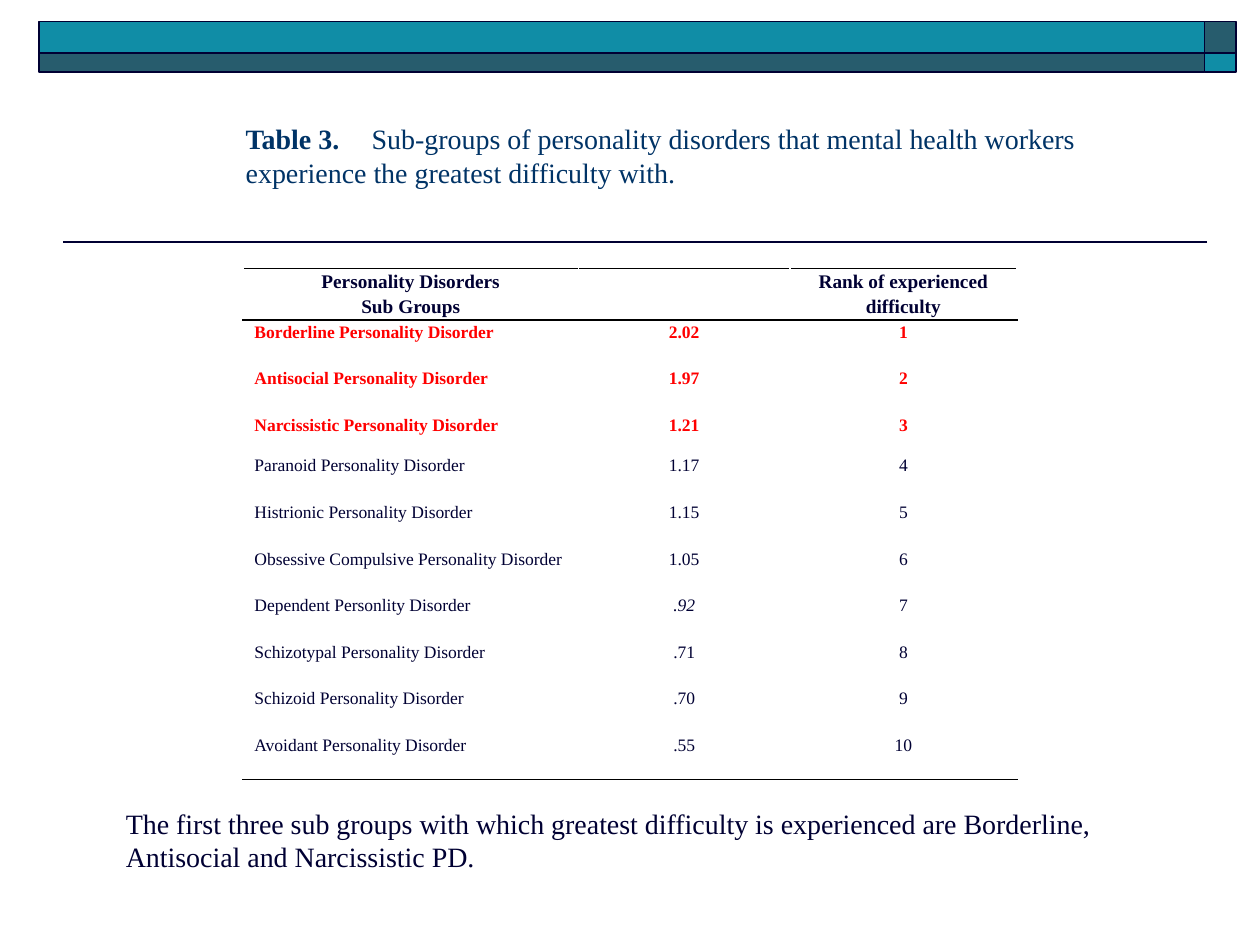
from typing import Any, NamedTuple

from lxml import etree
from pptx import Presentation
from pptx.dml.color import RGBColor
from pptx.enum import shapes, text
from pptx.oxml import ns
from pptx.util import Inches, Pt

NAVY = RGBColor(0x00, 0x00, 0x33)
TITLE_BLUE = RGBColor(0x00, 0x33, 0x66)
TEAL = RGBColor(0x10, 0x8D, 0xA6)
DARK_TEAL = RGBColor(0x27, 0x5C, 0x6D)
RED = RGBColor(0xFF, 0x00, 0x00)
FONT = "Times New Roman"
TOP_RANKS = 3
COLUMN_WIDTHS = (2.66, 1.68, 1.8)
HEADER_HEIGHT, ROW_HEIGHT, SHORT_ROW_HEIGHT = 0.41, 0.37, 0.32


class Band(NamedTuple):
    left: float
    top: float
    width: float
    height: float
    color: RGBColor


class Disorder(NamedTuple):
    name: str
    score: str
    italic_score: bool = False


BANDS = (
    Band(9.56, 0.17, 0.25, 0.25, DARK_TEAL),
    Band(0.31, 0.17, 9.25, 0.25, TEAL),
    Band(0.31, 0.42, 9.25, 0.15, DARK_TEAL),
    Band(9.56, 0.42, 0.25, 0.15, TEAL),
)
HEADERS = ("Personality Disorders\nSub Groups", "", "Rank of experienced difficulty")
DISORDERS = (
    Disorder("Borderline Personality Disorder", "2.02"),
    Disorder("Antisocial Personality Disorder", "1.97"),
    Disorder("Narcissistic Personality Disorder", "1.21"),
    Disorder("Paranoid Personality Disorder", "1.17"),
    Disorder("Histrionic Personality Disorder", "1.15"),
    Disorder("Obsessive Compulsive Personality Disorder", "1.05"),
    Disorder("Dependent Personlity Disorder", ".92", italic_score=True),
    Disorder("Schizotypal Personality Disorder", ".71"),
    Disorder("Schizoid Personality Disorder", ".70"),
    Disorder("Avoidant Personality Disorder", ".55"),
)


def set_attributes(target: Any, values: dict[str, Any]) -> None:
    for name, value in values.items():
        setattr(target, name, value)


def add_run(paragraph: Any, words: str, size: float, color: RGBColor,
            bold: bool = False, italic: bool = False) -> None:
    run = paragraph.add_run()
    run.text = words
    set_attributes(run.font, {"name": FONT, "size": Pt(size), "bold": bold, "italic": italic})
    run.font.color.rgb = color


def add_band(slide: Any, band: Band) -> None:
    shape = slide.shapes.add_shape(
        shapes.MSO_SHAPE.RECTANGLE, *(Inches(length) for length in band[:4]))
    shape.shadow.inherit = False
    shape.fill.solid()
    shape.fill.fore_color.rgb = band.color
    shape.line.color.rgb = NAVY
    shape.line.width = Pt(1)


def add_rule(slide: Any) -> None:
    rule = slide.shapes.add_connector(
        shapes.MSO_CONNECTOR.STRAIGHT, Inches(9.58), Inches(1.92), Inches(0.5), Inches(1.92))
    rule.line.color.rgb = NAVY
    rule.line.width = Pt(1)
    etree.SubElement(rule.element.spPr, ns.qn("a:effectLst"))


def add_title(slide: Any) -> None:
    title = slide.shapes.title
    set_attributes(title, {"left": Inches(1.85), "top": Inches(0.99),
                           "width": Inches(7.1), "height": Inches(0.56)})
    set_attributes(title.text_frame, {"vertical_anchor": text.MSO_ANCHOR.BOTTOM,
                                      "word_wrap": True,
                                      "auto_size": text.MSO_AUTO_SIZE.NONE})
    paragraph = title.text_frame.paragraphs[0]
    paragraph.alignment = text.PP_ALIGN.LEFT
    tabs = etree.SubElement(paragraph._p.get_or_add_pPr(), ns.qn("a:tabLst"))
    etree.SubElement(tabs, ns.qn("a:tab"), pos=str(Inches(1)), algn="l")
    add_run(paragraph, "Table 3.\t", 16, TITLE_BLUE, bold=True)
    add_run(paragraph, "Sub-groups of personality disorders that mental health workers "
                       "experience the greatest difficulty with.", 16, TITLE_BLUE)


def add_border(cell: Any, side: str) -> None:
    """Draw a black line on the cell's top ("T") or bottom ("B") side."""
    line = etree.SubElement(cell._tc.get_or_add_tcPr(), ns.qn(f"a:ln{side}"), w=str(Pt(1)))
    fill = etree.SubElement(line, ns.qn("a:solidFill"))
    etree.SubElement(fill, ns.qn("a:srgbClr"), val="000000")


def fill_cell(cell: Any, words: str, sides: str, centered: bool = True, **font: Any) -> None:
    set_attributes(cell, {"margin_left": Inches(0.07), "margin_right": Inches(0.07),
                          "margin_top": 0, "margin_bottom": 0,
                          "vertical_anchor": text.MSO_ANCHOR.TOP})
    for side in sides:
        add_border(cell, side)
    cell.fill.background()
    for index, line in enumerate(words.split("\n") if words else ()):
        frame = cell.text_frame
        paragraph = frame.add_paragraph() if index else frame.paragraphs[0]
        paragraph.line_spacing = 1.15
        if centered:
            paragraph.alignment = text.PP_ALIGN.CENTER
        else:
            paragraph._p.get_or_add_pPr().set("marL", str(Inches(0.02)))
        add_run(paragraph, line, **font)


def add_disorder_table(slide: Any) -> None:
    heights = [HEADER_HEIGHT] + [ROW_HEIGHT] * len(DISORDERS)
    heights[TOP_RANKS] = SHORT_ROW_HEIGHT
    table = slide.shapes.add_table(
        len(heights), len(COLUMN_WIDTHS), Inches(1.93), Inches(2.13),
        Inches(sum(COLUMN_WIDTHS)), Inches(sum(heights))).table
    set_attributes(table, {"first_row": False, "horz_banding": False})
    for column, width in zip(table.columns, COLUMN_WIDTHS):
        column.width = Inches(width)
    for row, height in zip(table.rows, heights):
        row.height = Inches(height)

    for column, header in enumerate(HEADERS):
        fill_cell(table.cell(0, column), header, "TB", size=11, color=NAVY, bold=True)
    for rank, disorder in enumerate(DISORDERS, start=1):
        top = rank <= TOP_RANKS
        sides = {1: "T", len(DISORDERS): "B"}.get(rank, "")
        font = {"size": 10, "color": RED if top else NAVY, "bold": top}
        fill_cell(table.cell(rank, 0), disorder.name, sides, centered=False, **font)
        fill_cell(table.cell(rank, 1), disorder.score, sides,
                  italic=disorder.italic_score, **font)
        fill_cell(table.cell(rank, 2), str(rank), sides, **font)


def add_summary(slide: Any) -> None:
    box = slide.shapes.add_textbox(Inches(0.9), Inches(6.35), Inches(8.51), Inches(0.91))
    box.text_frame.word_wrap = True
    add_run(box.text_frame.paragraphs[0],
            "The first three sub groups with which greatest difficulty is experienced are "
            "Borderline, Antisocial and Narcissistic PD.", 16, NAVY)


def main() -> None:
    presentation = Presentation()
    set_attributes(presentation, {"slide_width": Inches(10), "slide_height": Inches(7.5)})
    slide = presentation.slides.add_slide(presentation.slide_layouts.get_by_name("Title Only"))
    add_rule(slide)
    for band in BANDS:
        add_band(slide, band)
    add_title(slide)
    add_disorder_table(slide)
    add_summary(slide)
    presentation.save("out.pptx")


if __name__ == "__main__":
    main()
